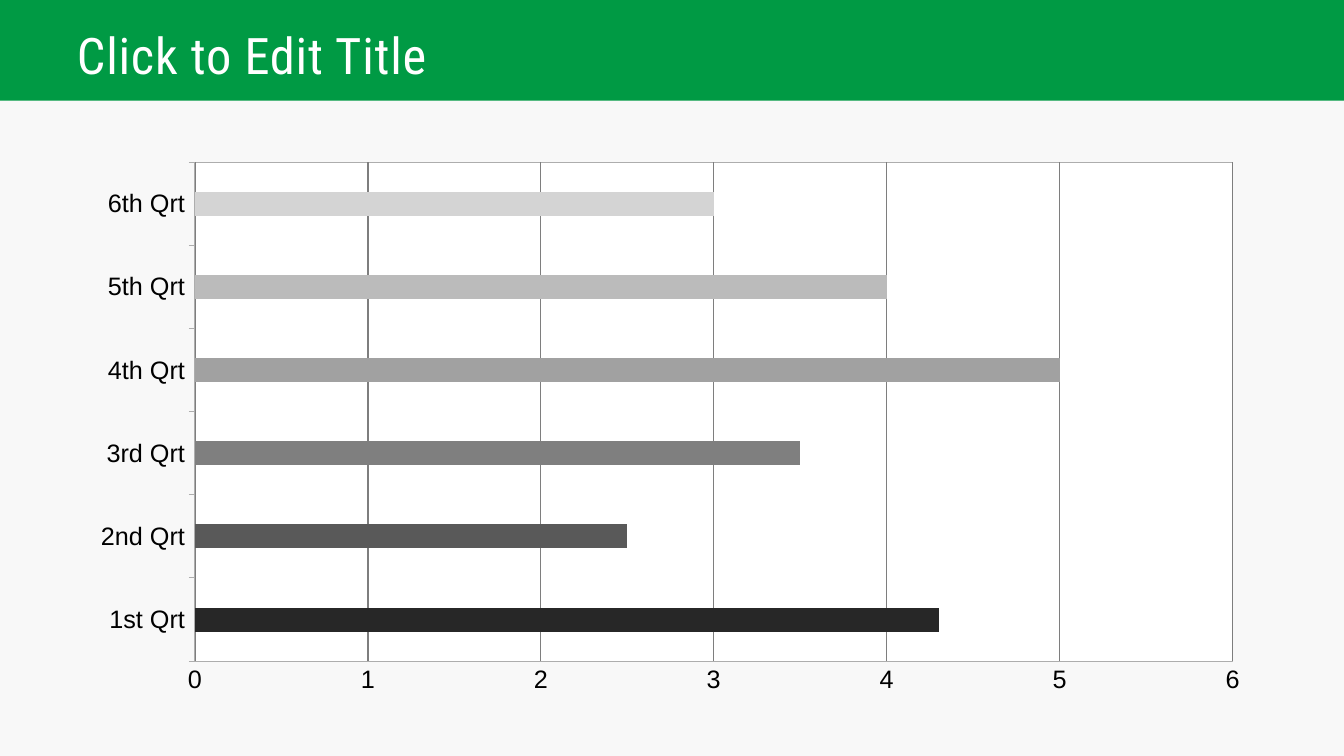
from lxml import etree
from pptx import Presentation
from pptx.chart.data import CategoryChartData
from pptx.dml.color import RGBColor
from pptx.enum.chart import XL_CHART_TYPE, XL_TICK_MARK
from pptx.enum.shapes import MSO_SHAPE
from pptx.enum.text import MSO_ANCHOR
from pptx.oxml.ns import nsdecls, qn
from pptx.util import Pt

BAR_CLUSTERED = XL_CHART_TYPE.BAR_CLUSTERED
TICK_NONE = XL_TICK_MARK.NONE
TICK_OUTSIDE = XL_TICK_MARK.OUTSIDE
RECTANGLE = MSO_SHAPE.RECTANGLE
MIDDLE = MSO_ANCHOR.MIDDLE

PAGE_WIDTH, PAGE_HEIGHT = 960, 540
GREEN, WHITE, BLACK, PAPER = "009A44", "FFFFFF", "000000", "F8F8F8"
AXIS_GREY, GRID_GREY = "ADADAD", "7E7E7E"
QUARTERS = [
    ("1st Qrt", 4.3, "272727"),
    ("2nd Qrt", 2.5, "595959"),
    ("3rd Qrt", 3.5, "7F7F7F"),
    ("4th Qrt", 5, "A1A1A1"),
    ("5th Qrt", 4, "BBBBBB"),
    ("6th Qrt", 3, "D4D4D4"),
]


def paint(fill, color):
    """Give a fill one solid colour."""
    fill.solid()
    fill.fore_color.rgb = RGBColor.from_string(color)


def style_font(font, size, color, name):
    """Set the size, colour and typeface of a font."""
    font.size = Pt(size)
    font.name = name
    font.color.rgb = RGBColor.from_string(color)


def style_line(line, color, width):
    """Set the colour and width of a line."""
    line.color.rgb = RGBColor.from_string(color)
    line.width = Pt(width)


def add_text(page, box, text, *, size, color, font, top_inset=0, line_spacing=1.0, tracking=0):
    """Add a vertically centred line of text in a box."""
    frame = page.shapes.add_textbox(*map(Pt, box)).text_frame
    frame.word_wrap = True
    frame.vertical_anchor = MIDDLE
    frame.margin_left = frame.margin_right = frame.margin_bottom = 0
    frame.margin_top = Pt(top_inset)
    para = frame.paragraphs[0]
    para.line_spacing = line_spacing
    span = para.add_run()
    span.text = text
    style_font(span.font, size, color, font)
    span.font._element.set("spc", str(round(tracking * 100)))


def add_header(page, box, title):
    """Add the green band with the slide title."""
    left, top, width, height = box
    band = page.shapes.add_shape(RECTANGLE, *map(Pt, box))
    band.shadow.inherit = False
    paint(band.fill, GREEN)
    band.line.fill.background()
    add_text(page, (left + 55, top, width - 240, height), title, size=36, color=WHITE,
             font="Roboto Condensed", top_inset=10.8, line_spacing=0.9, tracking=0.6)


def frame_plot(chart, left, top, width, height):
    """Place the plot by fractions of the chart and give it a white framed ground."""
    plot_area = chart._chartSpace.chart.plotArea
    for old_layout in plot_area.findall(qn("c:layout")):
        plot_area.remove(old_layout)
    places = "".join(f'<c:{key} val="{value}"/>' for key, value in
                     (("x", left), ("y", top), ("w", width), ("h", height)))
    plot_area.insert(0, etree.fromstring(
        f'<c:layout {nsdecls("c")}><c:manualLayout><c:layoutTarget val="inner"/>'
        f'<c:xMode val="edge"/><c:yMode val="edge"/>{places}</c:manualLayout></c:layout>'))
    plot_area.append(etree.fromstring(
        f'<c:spPr {nsdecls("c", "a")}><a:solidFill><a:srgbClr val="{WHITE}"/></a:solidFill>'
        f'<a:ln w="9525"><a:solidFill><a:srgbClr val="{AXIS_GREY}"/></a:solidFill></a:ln></c:spPr>'))


def add_quarter_chart(page, box):
    """Add the bar chart with one shade of grey per quarter."""
    names, values, shades = zip(*QUARTERS)
    chart_data = CategoryChartData()
    chart_data.categories = names
    chart_data.add_series("Series 1", values)
    chart = page.shapes.add_chart(BAR_CLUSTERED, *map(Pt, box), chart_data).chart
    chart.has_legend = False
    chart.has_title = False
    style_font(chart.font, 10, BLACK, "Arial")

    plot = chart.plots[0]
    plot.gap_width = 247
    plot.vary_by_categories = False
    series = plot.series[0]
    paint(series.format.fill, GREEN)
    for index, shade in enumerate(shades):
        paint(series.points[index].format.fill, shade)

    quarter_axis, value_axis = chart.category_axis, chart.value_axis
    for axis, tick in ((quarter_axis, TICK_OUTSIDE), (value_axis, TICK_NONE)):
        axis.major_tick_mark = tick
        axis.minor_tick_mark = TICK_NONE
        style_font(axis.tick_labels.font, 18, BLACK, "Arial")
    style_line(quarter_axis.format.line, AXIS_GREY, 0.75)
    value_axis.format.line.fill.background()
    value_axis.minimum_scale, value_axis.maximum_scale, value_axis.major_unit = 0, 6, 1
    value_axis.has_major_gridlines = True
    style_line(value_axis.major_gridlines.format.line, GRID_GREY, 1)
    frame_plot(chart, left=0.1, top=0.02, width=0.87, height=0.9)


def main():
    """Build the slide and save the deck."""
    deck = Presentation()
    deck.slide_width, deck.slide_height = Pt(PAGE_WIDTH), Pt(PAGE_HEIGHT)
    page = deck.slides.add_slide(deck.slide_layouts[6])
    paint(page.background.fill, PAPER)
    add_header(page, (0, 0, PAGE_WIDTH, 72), "Click to Edit Title")
    add_quarter_chart(page, (54, 108, 852, 396))
    deck.save("out.pptx")


if __name__ == "__main__":
    main()
